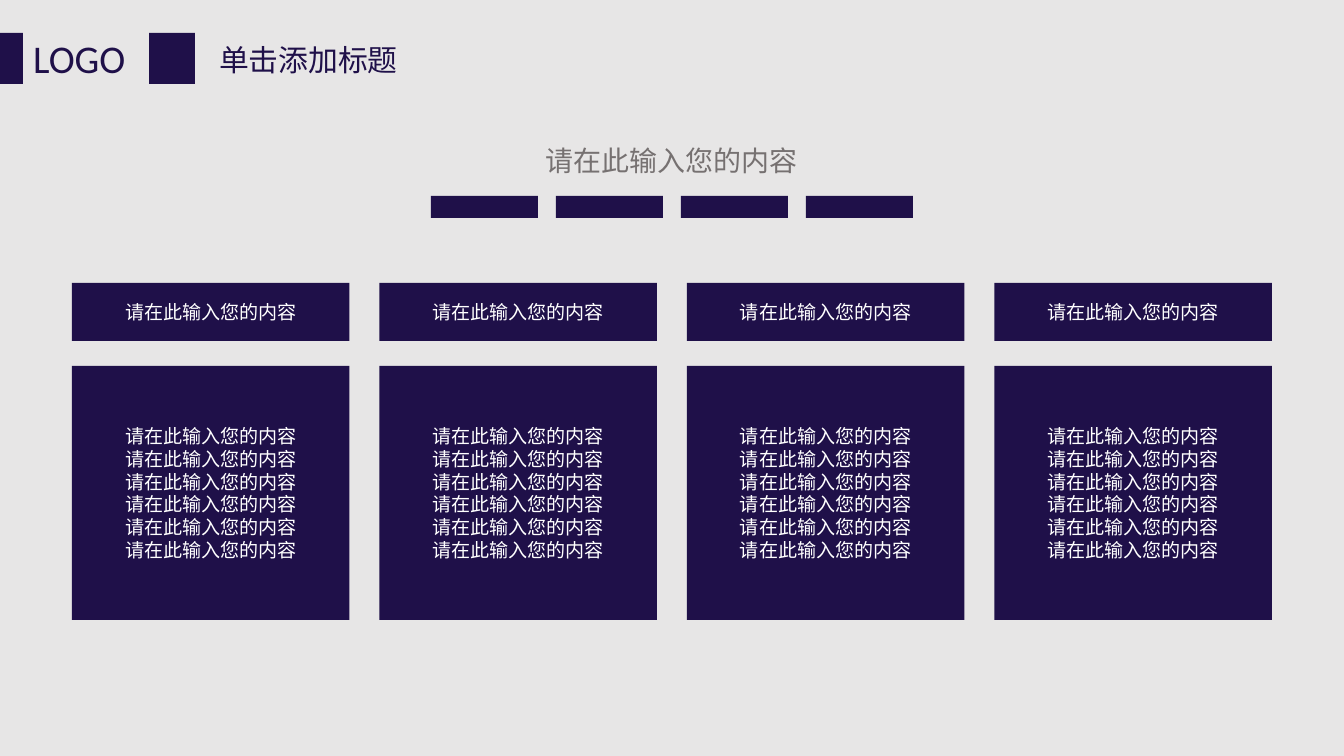
from pptx import Presentation
from pptx.dml.color import RGBColor
from pptx.enum.shapes import MSO_SHAPE
from pptx.enum.text import MSO_ANCHOR, PP_ALIGN
from pptx.util import Emu, Pt

EMU_PER_PX = 914400 / 134.4
NAVY = RGBColor(0x1F, 0x10, 0x49)
GRAY = RGBColor(0x76, 0x71, 0x71)
LIGHT_GRAY = RGBColor(0xE7, 0xE6, 0xE6)
WHITE = RGBColor(0xFF, 0xFF, 0xFF)
FONT = "Calibri"
PROMPT = "请在此输入您的内容"
COLUMN_COUNT = 4
BODY_LINE_COUNT = 6


def px(length):
    """Convert pixels to EMU."""
    return Emu(round(length * EMU_PER_PX))


def write_lines(text_frame, lines, size, color, alignment):
    """Fill a text frame with one paragraph per line."""
    text_frame.word_wrap = True
    text_frame.text = "\n".join(lines)
    for paragraph in text_frame.paragraphs:
        paragraph.alignment = alignment
        paragraph.font.name = FONT
        paragraph.font.size = Pt(size)
        paragraph.font.color.rgb = color


def add_block(slide, left, top, width, height, lines=()):
    """Add a navy rectangle with optional centred white lines."""
    shape = slide.shapes.add_shape(
        MSO_SHAPE.RECTANGLE, px(left), px(top), px(width), px(height)
    )
    shape.shadow.inherit = False
    shape.fill.solid()
    shape.fill.fore_color.rgb = NAVY
    shape.line.fill.background()
    if lines:
        shape.text_frame.vertical_anchor = MSO_ANCHOR.MIDDLE
        write_lines(shape.text_frame, lines, 10.2, WHITE, PP_ALIGN.CENTER)


def add_label(slide, left, top, width, height, text, size, color, alignment=PP_ALIGN.LEFT):
    """Add a single-line text box."""
    text_box = slide.shapes.add_textbox(px(left), px(top), px(width), px(height))
    write_lines(text_box.text_frame, [text], size, color, alignment)


def split_columns(left, width, gap):
    """Return the left edges and the shared width of equal columns."""
    column_width = (width - gap * (COLUMN_COUNT - 1)) / COLUMN_COUNT
    lefts = [left + index * (column_width + gap) for index in range(COLUMN_COUNT)]
    return lefts, column_width


def add_header(slide, left, top, height):
    """Place the logo text between two blocks, followed by the title."""
    add_label(slide, left + 20, top - 5, 136, 61, "LOGO", 21, NAVY)
    add_block(slide, left, top, 23, height)
    add_block(slide, left + 149, top, 46, height)
    add_label(slide, left + 206, top + 2, 290, 50, "单击添加标题", 16, NAVY)


def add_subtitle(slide, left, top, width):
    """Place the centred subtitle above a row of bars."""
    add_label(slide, left, top, width, 47, PROMPT, 15, GRAY, PP_ALIGN.CENTER)
    bar_lefts, bar_width = split_columns(left, width, 18)
    for bar_left in bar_lefts:
        add_block(slide, bar_left, top + 59, bar_width, 22)


def add_cards(slide, left, top, width, height):
    """Place columns that each have a heading block and a body block."""
    body_offset = 83
    card_lefts, card_width = split_columns(left, width, 30)
    for card_left in card_lefts:
        add_block(slide, card_left, top, card_width, 58, [PROMPT])
        add_block(
            slide, card_left, top + body_offset, card_width, height - body_offset,
            [PROMPT] * BODY_LINE_COUNT,
        )


def main():
    """Build and save the presentation."""
    presentation = Presentation()
    presentation.slide_width = px(1344)
    presentation.slide_height = px(756)
    slide = presentation.slides.add_slide(presentation.slide_layouts[6])
    slide.background.fill.solid()
    slide.background.fill.fore_color.rgb = LIGHT_GRAY
    add_header(slide, 0, 33, 51)
    add_subtitle(slide, 431, 137, 482)
    add_cards(slide, 72, 283, 1200, 337)
    presentation.save("out.pptx")


if __name__ == "__main__":
    main()
